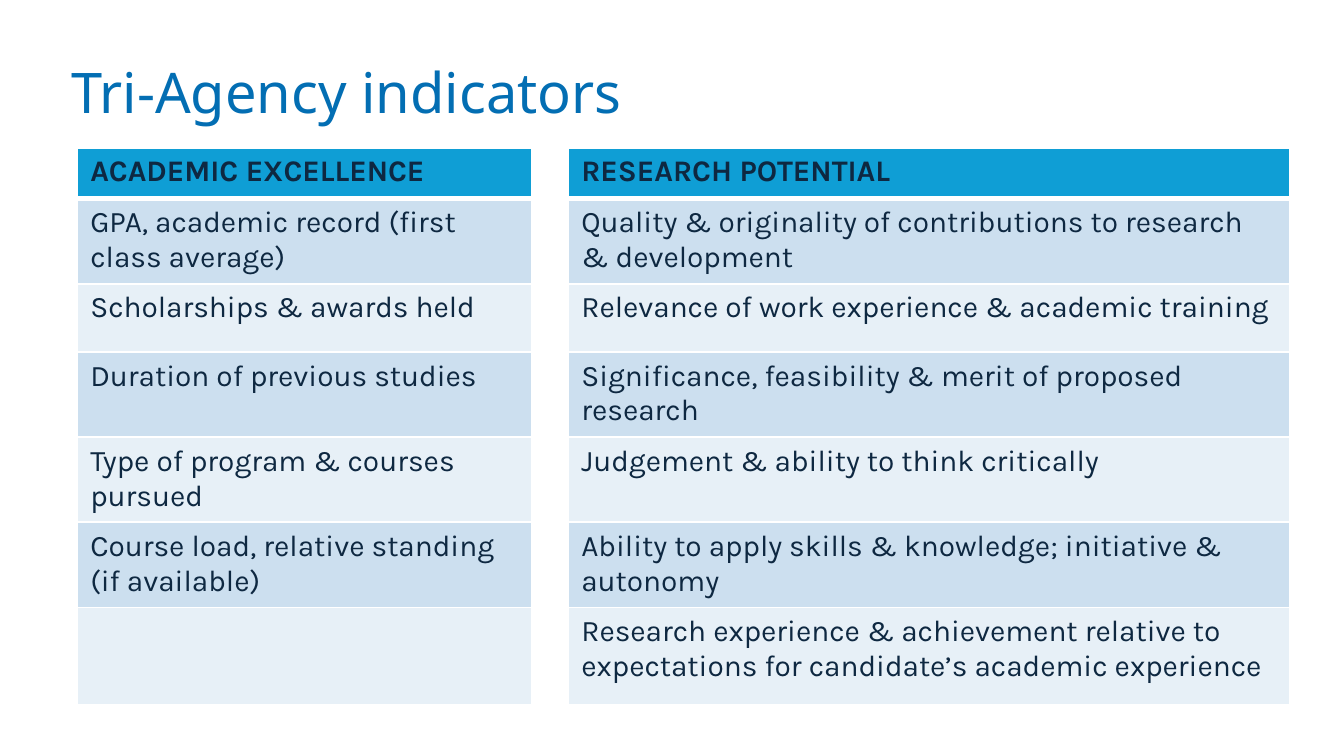
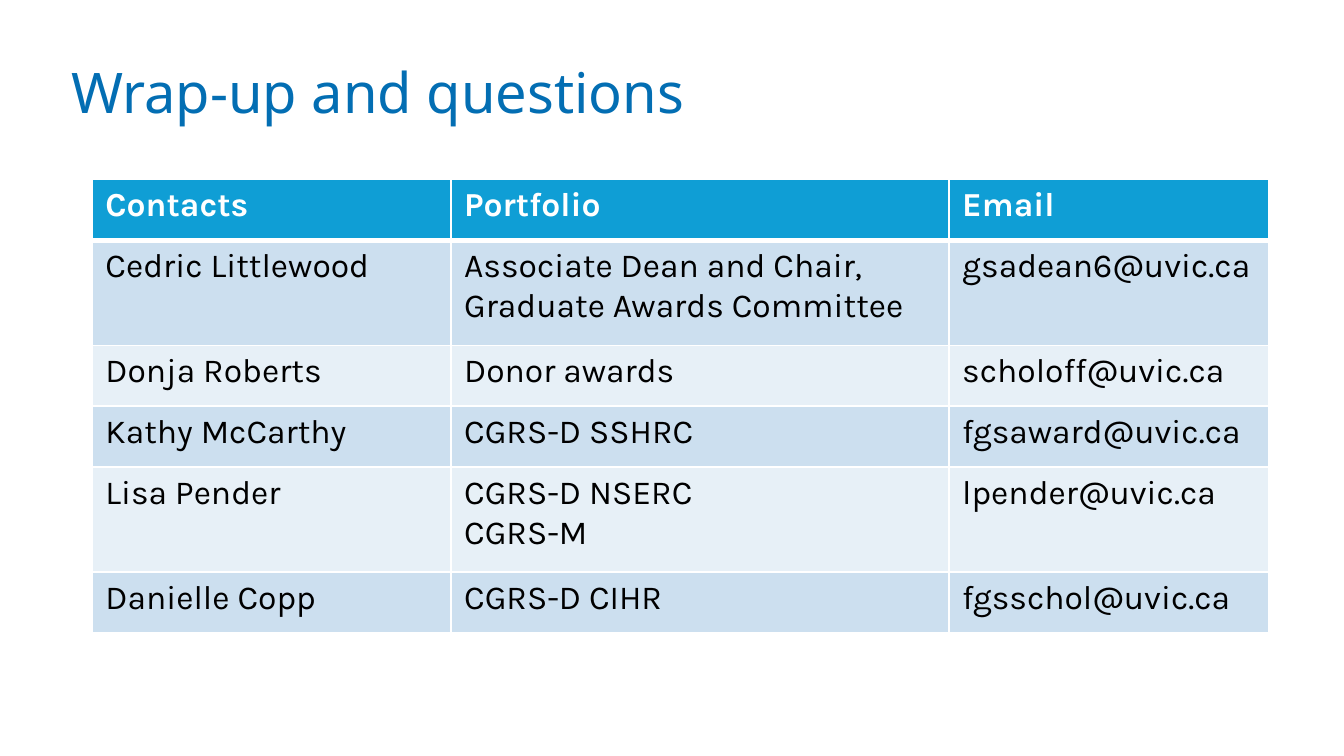
from dataclasses import dataclass

from lxml.etree import SubElement
from pptx import Presentation
from pptx.dml.color import RGBColor
from pptx.enum.text import MSO_ANCHOR
from pptx.oxml.ns import qn
from pptx.util import Pt


@dataclass(frozen=True)
class Theme:
    title_blue: str = "036EB3"
    navy: str = "0E2841"
    header_blue: str = "0F9ED5"
    bands: tuple = ("CCDFEF", "E7F0F7")
    white: str = "FFFFFF"
    black: str = "000000"
    title_font: str = "Noto Sans"
    body_font: str = "Karla"
    title_size: int = 30
    indicator_size: int = 16
    contact_size: int = 18
    rule: int = 1
    header_rule: int = 3


THEME = Theme()
TITLE_BOX = (31, 21.6, 648.7, 54.7)

INDICATORS = [
    ("ACADEMIC EXCELLENCE", None, "RESEARCH POTENTIAL"),
    ("GPA, academic record (first class average)", None,
     "Quality & originality of contributions to research & development"),
    ("Scholarships & awards held", None,
     "Relevance of work experience & academic training"),
    ("Duration of previous studies", None,
     "Significance, feasibility & merit of proposed research"),
    ("Type of program & courses pursued", None,
     "Judgement & ability to think critically"),
    ("Course load, relative standing (if available)", None,
     "Ability to apply skills & knowledge; initiative & autonomy"),
    ("", None,
     "Research experience & achievement relative to expectations "
     "for candidate’s academic experience"),
]

CONTACTS = [
    ("Contacts", "Portfolio", "Email"),
    ("Cedric Littlewood", "Associate Dean and Chair, Graduate Awards Committee",
     "gsadean6@uvic.ca"),
    ("Donja Roberts", "Donor awards", "scholoff@uvic.ca"),
    ("Kathy McCarthy", "CGRS-D SSHRC", "fgsaward@uvic.ca"),
    ("Lisa Pender", "CGRS-D NSERC\nCGRS-M", "lpender@uvic.ca"),
    ("Danielle Copp", "CGRS-D CIHR", "fgsschol@uvic.ca"),
]


def add_run(paragraph, text, font_name, size, color, bold=False):
    run = paragraph.add_run()
    run.text = text
    run.font.name = font_name
    run.font.size = Pt(size)
    run.font.bold = bold
    run.font.color.rgb = RGBColor.from_string(color)


def add_title(slide, text, box):
    title = slide.shapes.add_textbox(*map(Pt, box)).text_frame
    title.word_wrap = True
    title.vertical_anchor = MSO_ANCHOR.MIDDLE
    add_run(title.paragraphs[0], text, THEME.title_font, THEME.title_size,
            THEME.title_blue)


def add_borders(cell, row):
    """White rules on all sides, heavier between the header and the body."""
    top = THEME.header_rule if row == 1 else THEME.rule
    bottom = THEME.header_rule if row == 0 else THEME.rule
    properties = cell._tc.get_or_add_tcPr()
    for side, width in (("L", THEME.rule), ("R", THEME.rule),
                        ("T", top), ("B", bottom)):
        line = SubElement(properties, qn(f"a:ln{side}"), w=str(Pt(width)))
        fill = SubElement(line, qn("a:solidFill"))
        SubElement(fill, qn("a:srgbClr"), val=THEME.white)


def fill_cell(cell, text, row, size, color):
    """Write one cell; None marks an unfilled gap between columns."""
    add_borders(cell, row)
    if text is None:
        cell.fill.background()
    else:
        cell.fill.solid()
        band = THEME.header_blue if row == 0 else THEME.bands[(row - 1) % 2]
        cell.fill.fore_color.rgb = RGBColor.from_string(band)
    if not text:
        SubElement(cell.text_frame.paragraphs[0]._p, qn("a:endParaRPr"),
                   sz=str(size * 100))
        return
    for index, line in enumerate(text.split("\n")):
        frame = cell.text_frame
        paragraph = frame.add_paragraph() if index else frame.paragraphs[0]
        add_run(paragraph, line, THEME.body_font, size, color, bold=row == 0)


def add_banded_table(slide, records, origin, widths, heights, size,
                     header_color, body_color):
    table = slide.shapes.add_table(
        len(heights), len(widths), *map(Pt, origin),
        Pt(sum(widths)), Pt(sum(heights))).table
    table.horz_banding = False
    for column, width in zip(table.columns, widths):
        column.width = Pt(width)
    for row, (record, height) in enumerate(zip(records, heights)):
        table.rows[row].height = Pt(height)
        color = body_color if row else header_color
        for column, text in enumerate(record):
            fill_cell(table.cell(row, column), text, row, size, color)


def build_indicators(slide):
    add_title(slide, "Tri-Agency indicators", TITLE_BOX)
    add_banded_table(slide, INDICATORS, (41.2, 79.2), (243.8, 19.3, 386.7),
                     (27.2, 43.4, 36.6, 36.6, 43.4, 43.4, 52.3),
                     THEME.indicator_size, THEME.navy, THEME.navy)


def build_contacts(slide):
    single, double = 32.6, 56.4
    add_title(slide, "Wrap-up and questions", TITLE_BOX)
    add_banded_table(slide, CONTACTS, (49.3, 96), (192.2, 266.8, 171.3),
                     (single, double, single, single, double, single),
                     THEME.contact_size, THEME.white, THEME.black)


def main():
    deck = Presentation()
    deck.slide_width, deck.slide_height = Pt(720), Pt(405)
    blank = deck.slide_layouts[6]
    for build in (build_indicators, build_contacts):
        build(deck.slides.add_slide(blank))
    deck.save("out.pptx")


if __name__ == "__main__":
    main()
